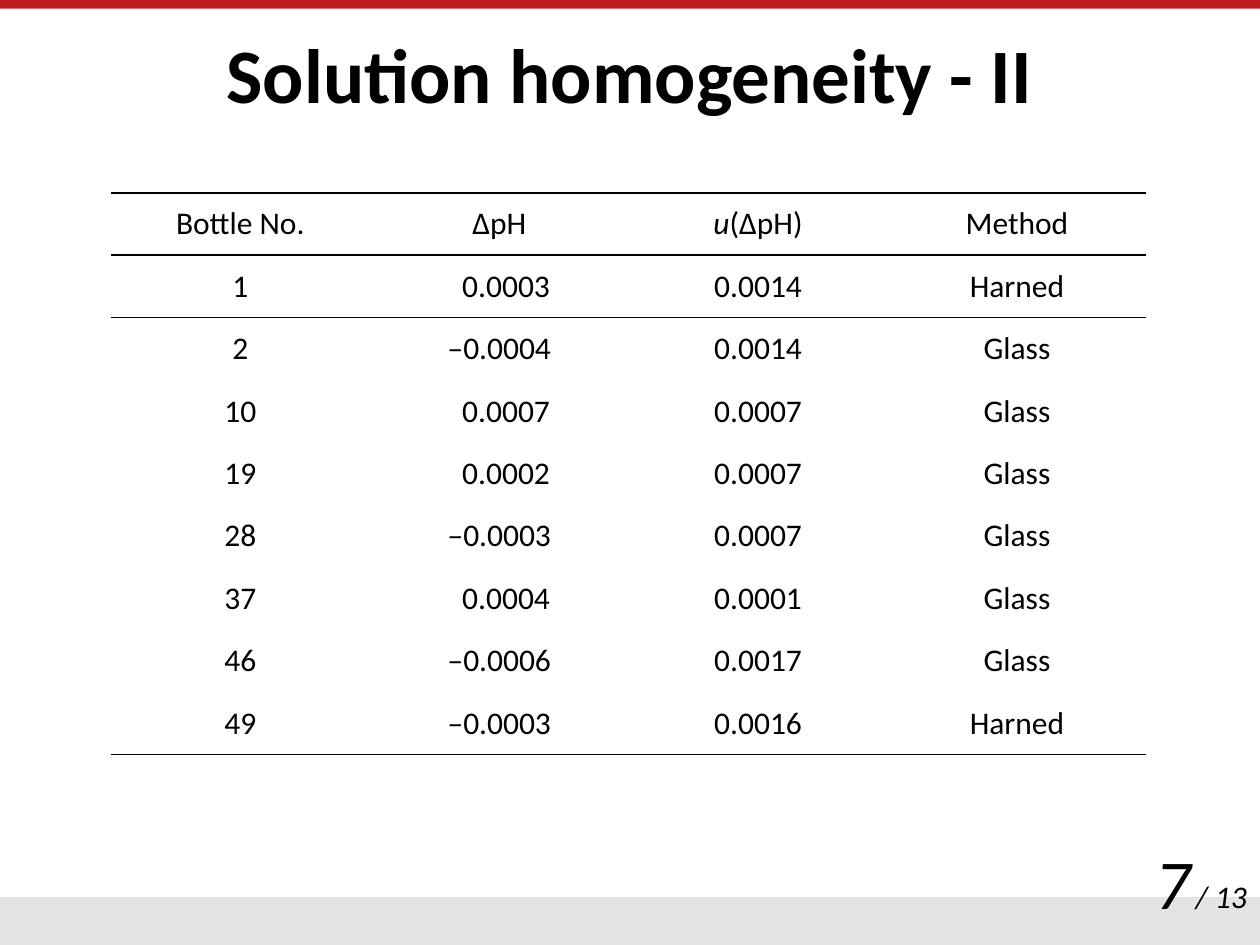
from pptx import Presentation
from pptx import util as u
from pptx.dml.color import RGBColor
from pptx.enum import shapes, text
from pptx.oxml.ns import qn
from lxml import etree

BLACK = RGBColor(0, 0, 0)
RED = RGBColor(0xBE, 0x1A, 0x20)
GREY = RGBColor(0xE3, 0xE3, 0xE3)
WIDTH, HEIGHT = 10, 7.5
FONT = "Calibri"
MINUS = "‒"
MARGIN, SIGN_WIDTH = 0.1, 0.11

HEADER = ("Bottle No.", "ΔpH", "u(ΔpH)", "Method")
BOTTLES = (
    ("1", "0.0003", "0.0014", "Harned"),
    ("2", "‒0.0004", "0.0014", "Glass"),
    ("10", "0.0007", "0.0007", "Glass"),
    ("19", "0.0002", "0.0007", "Glass"),
    ("28", "‒0.0003", "0.0007", "Glass"),
    ("37", "0.0004", "0.0001", "Glass"),
    ("46", "‒0.0006", "0.0017", "Glass"),
    ("49", "‒0.0003", "0.0016", "Harned"),
)
ROWS = (HEADER,) + BOTTLES
RULED_EDGES = (0, 1, 2, len(ROWS))


def add_band(s, top, height, color):
    sp = s.shapes.add_shape(shapes.MSO_SHAPE.RECTANGLE, 0, u.Inches(top),
                            u.Inches(WIDTH), u.Inches(height))
    sp.shadow.inherit = False
    sp.fill.solid()
    sp.fill.fore_color.rgb = color
    sp.line.fill.background()


def style_run(r, size, bold=False, italic=False):
    r.font.name = FONT
    r.font.size = u.Pt(size)
    r.font.bold = bold
    r.font.italic = italic
    r.font.color.rgb = BLACK


def add_label(s, words, box, size, align, anchor, bold=False, italic=False):
    sp = s.shapes.add_textbox(*(u.Inches(v) for v in box))
    tf = sp.text_frame
    tf.word_wrap = True
    tf.vertical_anchor = anchor
    p = tf.paragraphs[0]
    p.text = words
    p.alignment = align
    style_run(p.runs[0], size, bold, italic)
    return p


def set_border(cell, side, ruled):
    ln = etree.SubElement(cell._tc.get_or_add_tcPr(), qn(f"a:ln{side}"),
                          w=str(u.Pt(1)))
    if ruled:
        fill = etree.SubElement(ln, qn("a:solidFill"))
        etree.SubElement(fill, qn("a:srgbClr"), val=str(BLACK))
    else:
        etree.SubElement(ln, qn("a:noFill"))


def fill_cell(cell, row, col, words):
    p = cell.text_frame.paragraphs[0]
    p.alignment = text.PP_ALIGN.CENTER
    cell.vertical_anchor = text.MSO_ANCHOR.MIDDLE
    parts = ("u", words[1:]) if words.startswith("u(") else (words,)
    for part in parts:
        r = p.add_run()
        r.text = part
        style_run(r, 18, italic=part == "u")
    if row and col == 1 and not words.startswith(MINUS):
        cell.margin_left = u.Inches(MARGIN + SIGN_WIDTH)
    for side, ruled in (("L", False), ("R", False),
                        ("T", row in RULED_EDGES),
                        ("B", row + 1 in RULED_EDGES)):
        set_border(cell, side, ruled)
    cell.fill.background()


def add_bottle_table(s, box):
    table = s.shapes.add_table(len(ROWS), len(HEADER),
                               *(u.Inches(v) for v in box)).table
    table.first_row = False
    table.horz_banding = False
    for row, values in enumerate(ROWS):
        for col, words in enumerate(values):
            fill_cell(table.cell(row, col), row, col, words)


def main():
    prs = Presentation()
    prs.slide_width, prs.slide_height = u.Inches(WIDTH), u.Inches(HEIGHT)
    s = prs.slides.add_slide(prs.slide_layouts[6])
    add_band(s, HEIGHT - 0.38, 0.38, GREY)
    add_band(s, 0, 0.07, RED)
    add_label(s, "7", (8.54, 6.58, 1.01, 0.8), 40, text.PP_ALIGN.RIGHT,
              text.MSO_ANCHOR.BOTTOM, italic=True)
    add_label(s, "/ 13", (9.39, 6.91, 0.61, 0.4), 18, text.PP_ALIGN.LEFT,
              text.MSO_ANCHOR.TOP, italic=True)
    title = add_label(s, "Solution homogeneity - II", (0, 0, WIDTH, HEIGHT / 6),
                      44, text.PP_ALIGN.CENTER, text.MSO_ANCHOR.MIDDLE, bold=True)
    title.line_spacing = 0.9
    add_bottle_table(s, (0.88, 1.53, 8.22, 4.46))
    prs.save("out.pptx")


if __name__ == "__main__":
    main()
